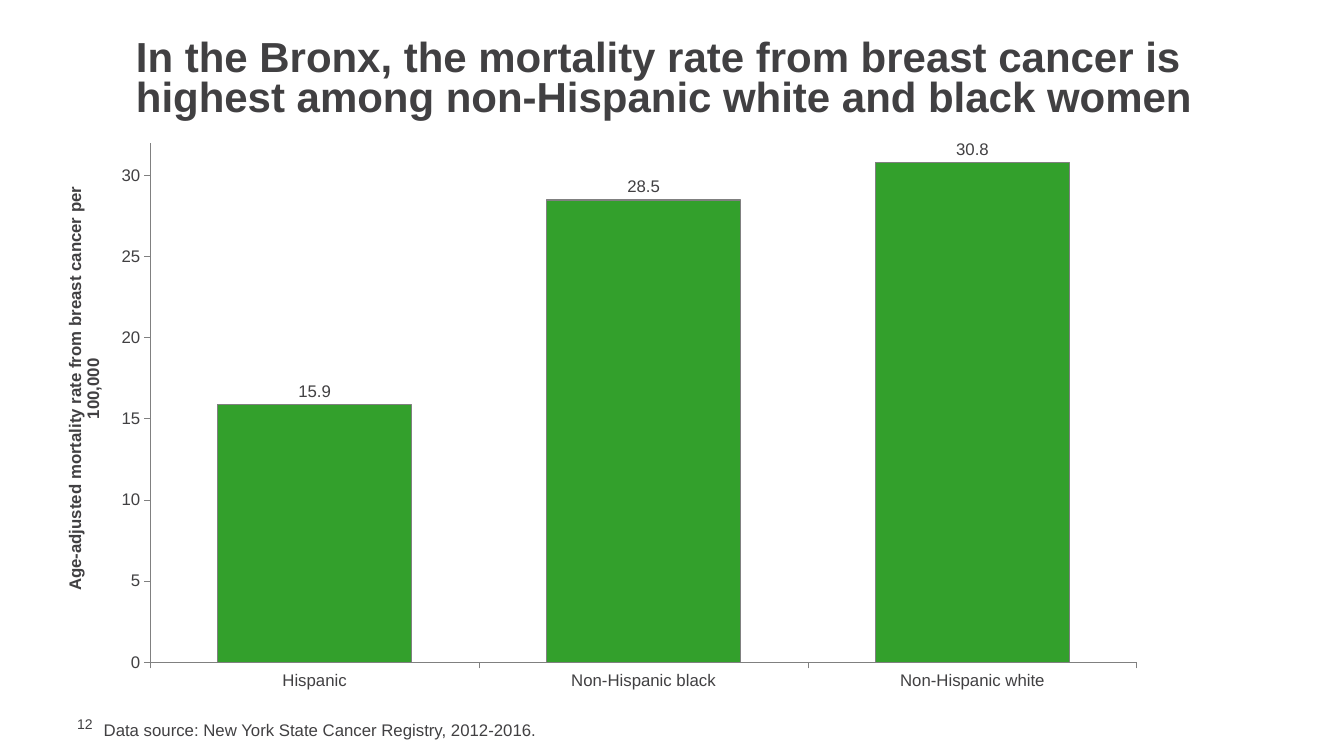
from dataclasses import dataclass

from lxml import etree
from pptx import Presentation
from pptx import util as u
from pptx.chart import data as chart_data
from pptx.dml import color
from pptx.enum import chart as charts, text
from pptx.oxml import ns

FONT = "Arial"
INK = "414042"
GREY = "808080"
GREEN = "33A02C"


@dataclass(frozen=True)
class Caption:
    wording: str
    left: float
    top: float
    width: float
    height: float
    size: float
    bold: bool = False
    anchor: text.MSO_ANCHOR = text.MSO_ANCHOR.TOP
    spacing: float = 1.0
    inset: float = 3.6
    right_inset: float = 7.2


CAPTIONS = [
    Caption("12", 48, 511, 31, 12.5, 10, anchor=text.MSO_ANCHOR.MIDDLE, inset=0, right_inset=0),
    Caption("In the Bronx, the mortality rate from breast cancer is highest among "
            "non-Hispanic white and black women", 90, 24.5, 780, 65.5, 30, bold=True,
            anchor=text.MSO_ANCHOR.MIDDLE, spacing=0.8),
    Caption("Data source: New York State Cancer Registry, 2012-2016.", 67, 510.5, 714, 21.5, 12),
]
MORTALITY_RATES = {"Hispanic": 15.9, "Non-Hispanic black": 28.5, "Non-Hispanic white": 30.8}


def rgb(code: str) -> color.RGBColor:
    return color.RGBColor.from_string(code)


def style_font(font, *, size: float = 12, bold: bool = False, ink: str = INK) -> None:
    font.name = FONT
    font.size = u.Pt(size)
    font.bold = bold
    font.color.rgb = rgb(ink)


def write(frame, wording: str, *, spacing: float = 1.0, **font_format) -> None:
    paragraph = frame.paragraphs[0]
    paragraph.line_spacing = spacing
    run = paragraph.add_run()
    run.text = wording
    style_font(run.font, **font_format)


def draw_caption(slide, caption: Caption) -> None:
    box = slide.shapes.add_textbox(*map(u.Pt, (caption.left, caption.top, caption.width, caption.height)))
    frame = box.text_frame
    frame.word_wrap = True
    frame.vertical_anchor = caption.anchor
    frame.margin_left = u.Pt(7.2)
    frame.margin_right = u.Pt(caption.right_inset)
    frame.margin_top = frame.margin_bottom = u.Pt(caption.inset)
    write(frame, caption.wording, spacing=caption.spacing, size=caption.size, bold=caption.bold)


def outline(line) -> None:
    line.color.rgb = rgb(GREY)
    line.width = u.Pt(0.75)


def place(element, index: int, **settings) -> None:
    for old in element.findall(ns.qn("c:layout")):
        element.remove(old)
    layout = etree.Element(ns.qn("c:layout"))
    manual = etree.SubElement(layout, ns.qn("c:manualLayout"))
    for tag, value in settings.items():
        etree.SubElement(manual, ns.qn(f"c:{tag}")).set("val", str(value))
    element.insert(index, layout)


def style_axis(axis) -> None:
    axis.has_major_gridlines = False
    axis.major_tick_mark = charts.XL_TICK_MARK.OUTSIDE
    axis.minor_tick_mark = charts.XL_TICK_MARK.NONE
    style_font(axis.tick_labels.font)
    outline(axis.format.line)


def draw_mortality_chart(slide) -> None:
    rates = chart_data.CategoryChartData(number_format="0.0")
    rates.categories = list(MORTALITY_RATES)
    rates.add_series("Series 1", list(MORTALITY_RATES.values()))
    mortality = slide.shapes.add_chart(
        charts.XL_CHART_TYPE.COLUMN_CLUSTERED, u.Pt(36), u.Pt(90), u.Pt(792), u.Pt(412), rates).chart
    mortality.has_legend = False
    mortality.has_title = False
    style_font(mortality.font, size=10)

    groups, rate_axis = mortality.category_axis, mortality.value_axis
    for axis in (groups, rate_axis):
        style_axis(axis)
    rate_axis.minimum_scale = 0
    rate_axis.maximum_scale = 32
    rate_axis.major_unit = 5
    rate_axis.tick_labels.number_format = "0"
    rate_axis.tick_labels.number_format_is_linked = False
    write(rate_axis.axis_title.text_frame,
          "Age-adjusted mortality rate from breast cancer per 100,000", bold=True)

    columns = mortality.plots[0]
    columns.gap_width = 70
    columns.vary_by_categories = False
    bars = columns.series[0]
    bars.format.fill.solid()
    bars.format.fill.fore_color.rgb = rgb(GREEN)
    outline(bars.format.line)
    labels = bars.data_labels
    labels.show_value = True
    labels.number_format = "0.0"
    labels.number_format_is_linked = False
    labels.position = charts.XL_LABEL_POSITION.OUTSIDE_END
    style_font(labels.font)

    plot_area = mortality.element.find(f".//{ns.qn('c:plotArea')}")
    place(plot_area, 0, layoutTarget="inner", xMode="edge", yMode="edge", x=0.09, y=0.03, w=0.89, h=0.9)
    place(plot_area.find(f".//{ns.qn('c:title')}"), 1, xMode="edge", yMode="edge", x=0.01, y=0.1)


def main() -> None:
    deck = Presentation()
    deck.slide_width, deck.slide_height = u.Pt(960), u.Pt(540)
    slide = deck.slides.add_slide(deck.slide_layouts[6])
    slide.background.fill.solid()
    slide.background.fill.fore_color.rgb = rgb("FFFFFF")
    draw_mortality_chart(slide)
    for caption in CAPTIONS:
        draw_caption(slide, caption)
    deck.save("out.pptx")


if __name__ == "__main__":
    main()
